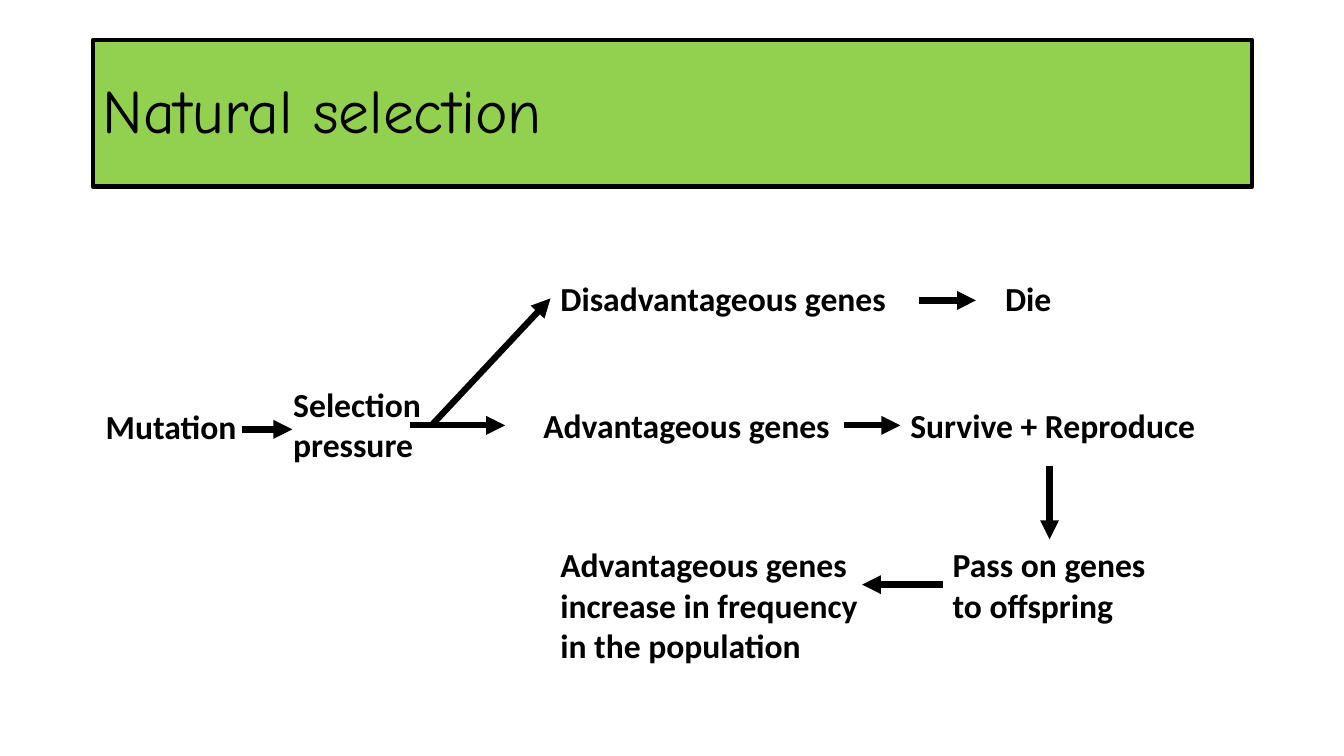
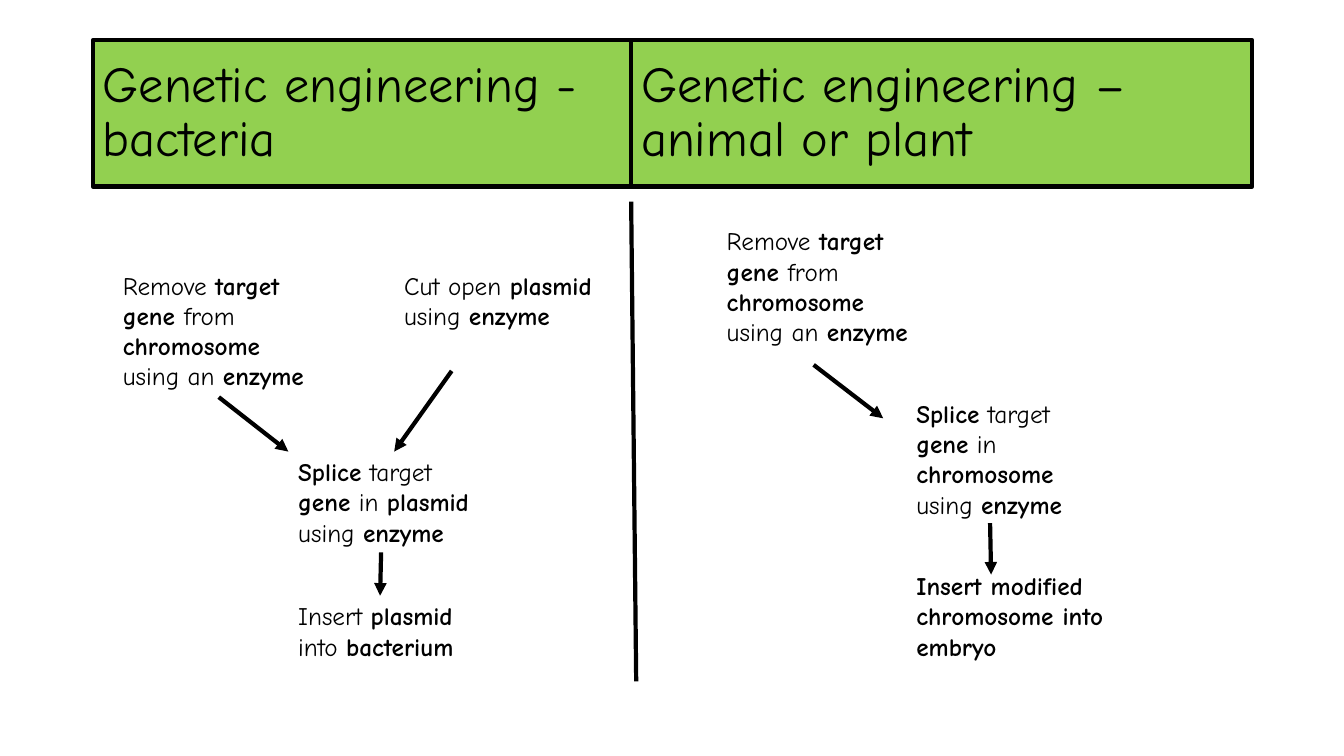
"""Build two biology slides: natural selection and genetic engineering."""
from lxml import etree
from pptx import Presentation
from pptx.dml.color import RGBColor
from pptx.enum.shapes import MSO_CONNECTOR, MSO_SHAPE
from pptx.enum.text import MSO_ANCHOR, PP_ALIGN
from pptx.oxml.ns import qn
from pptx.util import Pt

PX = 9144
SLIDE_WIDTH, SLIDE_HEIGHT = 1333, 750
BAND_TOP, BAND_HEIGHT = 40, 145
STRAIGHT, RECTANGLE = MSO_CONNECTOR.STRAIGHT, MSO_SHAPE.RECTANGLE
LEFT, TOP, MIDDLE = PP_ALIGN.LEFT, MSO_ANCHOR.TOP, MSO_ANCHOR.MIDDLE
BLACK = RGBColor(0x00, 0x00, 0x00)
GREEN = RGBColor(0x92, 0xD0, 0x50)
BOLD_MARK = "*"

TITLE_FONT = {"name": "Comic Neue", "size": Pt(44)}
SPLIT_TITLE_FONT = {"name": "Comic Neue", "size": Pt(36)}
FLOW_FONT = {"name": "Calibri", "size": Pt(24)}
STEP_FONT = {"name": "Comic Neue", "size": Pt(18)}

REMOVE_GENE = "Remove *target gene *from\n*chromosome* using an *enzyme*"

SLIDES = [
    {
        "title_font": TITLE_FONT,
        "titles": [("Natural selection", 92, 1150)],
        "label_font": FLOW_FONT,
        "labels": [
            ("*Mutation*", 95, 398, 152, 50),
            ("*Selection*\n*pressure*", 281, 376, 149, 91),
            ("*Disadvantageous genes*", 546, 271, 347, 50),
            ("*Die*", 987, 271, 67, 50),
            ("*Advantageous genes*", 529, 397, 307, 50),
            ("*Survive + Reproduce*", 893, 397, 305, 50),
            ("*Pass on genes*\n*to offspring*", 935, 535, 221, 91),
            ("*Advantageous genes*\n*increase in frequency in the population*",
             546, 535, 323, 131),
        ],
        "line_width": 4.5,
        "arrows": [
            (240, 426, 290, 426),
            (407, 422, 501, 422),
            (428, 422, 546, 296),
            (912, 298, 968, 298),
            (837, 422, 893, 422),
            (1041, 462, 1041, 535),
            (935, 580, 855, 580),
        ],
        "dividers": [],
    },
    {
        "title_font": SPLIT_TITLE_FONT,
        "titles": [
            ("Genetic engineering - bacteria", 92, 534),
            ("Genetic engineering – animal or plant", 626, 616),
        ],
        "label_font": STEP_FONT,
        "labels": [
            (REMOVE_GENE, 112, 263, 210, 131),
            ("Cut open *plasmid* using *enzyme*", 391, 263, 210, 101),
            ("*Splice* target *gene* in *plasmid *using *enzyme*",
             286, 448, 210, 101),
            ("Insert *plasmid* into *bacterium*", 286, 591, 210, 71),
            (REMOVE_GENE, 711, 219, 210, 131),
            ("*Splice* target *gene* in *chromosome *using *enzyme*",
             899, 390, 210, 131),
            ("*Insert modified chromosome into embryo*", 899, 561, 281, 101),
        ],
        "line_width": 3,
        "arrows": [
            (217, 394, 286, 448),
            (448, 368, 391, 448),
            (378, 548, 377, 591),
            (807, 362, 876, 415),
            (982, 519, 983, 570),
        ],
        "dividers": [(626, 200, 631, 676)],
    },
]


def scaled(*lengths):
    return [length * PX for length in lengths]


def write_text(shape, text, font, anchor=TOP, line_spacing=1.0):
    frame = shape.text_frame
    frame.word_wrap = True
    frame.vertical_anchor = anchor
    for index, line in enumerate(text.split("\n")):
        para = frame.paragraphs[0] if index == 0 else frame.add_paragraph()
        para.alignment = LEFT
        para.line_spacing = line_spacing
        for position, words in enumerate(line.split(BOLD_MARK)):
            if words:
                span = para.add_run()
                span.text = words
                span.font.bold = position % 2 == 1
                span.font.color.rgb = BLACK
                for name, value in font.items():
                    setattr(span.font, name, value)


def add_title(page, text, left, width, font):
    band = page.shapes.add_shape(
        RECTANGLE, *scaled(left, BAND_TOP, width, BAND_HEIGHT))
    band.shadow.inherit = False
    band.fill.solid()
    band.fill.fore_color.rgb = GREEN
    band.line.color.rgb = BLACK
    band.line.width = Pt(3)
    write_text(band, text, font, MIDDLE, 0.9)


def add_line(page, ends, width, arrowhead):
    line = page.shapes.add_connector(STRAIGHT, *scaled(*ends))
    line.line.color.rgb = BLACK
    line.line.width = Pt(width)
    properties = line._element.spPr
    if arrowhead:
        outline = properties.find(qn("a:ln"))
        etree.SubElement(outline, qn("a:tailEnd"), type="triangle")
    etree.SubElement(properties, qn("a:effectLst"))


def build_page(deck, content):
    page = deck.slides.add_slide(deck.slide_layouts[6])
    for text, left, width in content["titles"]:
        add_title(page, text, left, width, content["title_font"])
    for text, *place in content["labels"]:
        box = page.shapes.add_textbox(*scaled(*place))
        write_text(box, text, content["label_font"])
    for kind in ("arrows", "dividers"):
        for ends in content[kind]:
            add_line(page, ends, content["line_width"], kind == "arrows")


def main():
    deck = Presentation()
    deck.slide_width, deck.slide_height = scaled(SLIDE_WIDTH, SLIDE_HEIGHT)
    for content in SLIDES:
        build_page(deck, content)
    deck.save("out.pptx")


if __name__ == "__main__":
    main()
